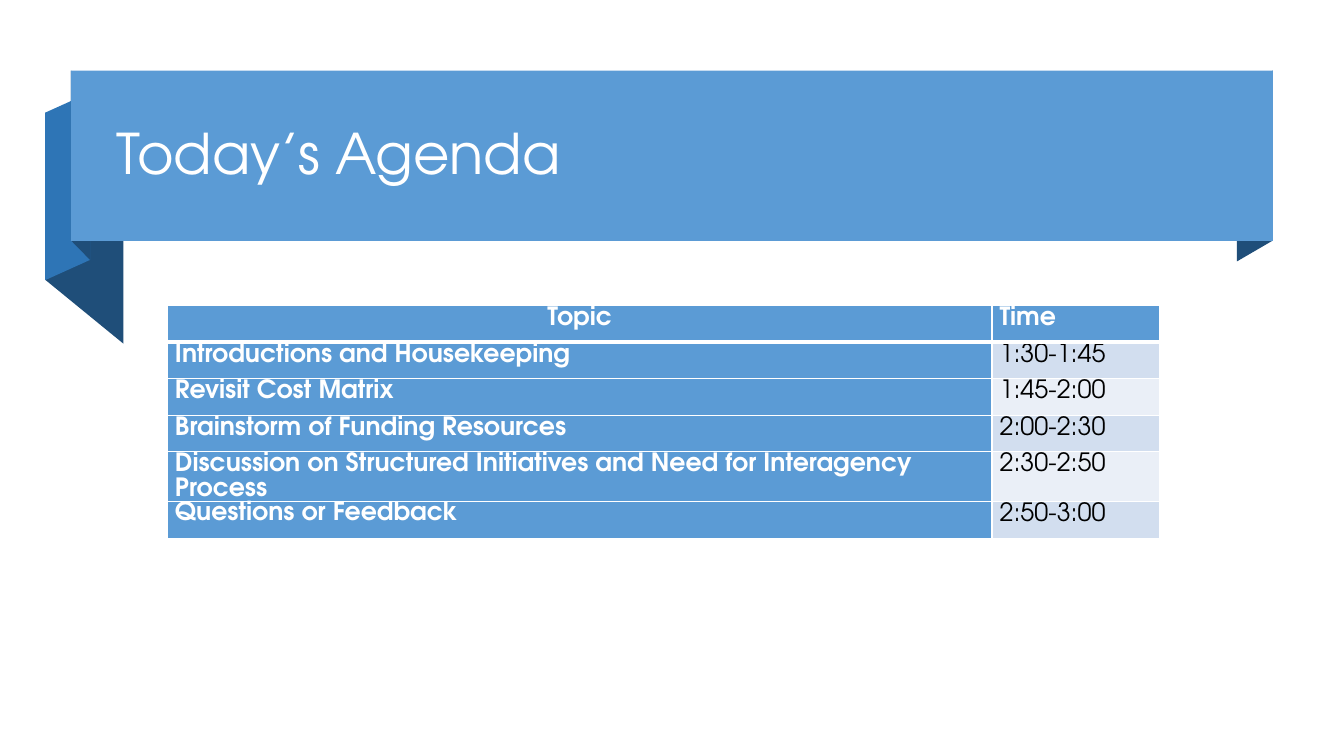
from lxml import etree
from pptx import Presentation
from pptx.dml.color import RGBColor
from pptx.enum import shapes, text
from pptx.oxml import ns
from pptx.util import Cm, Pt

BLUE = RGBColor(0x5B, 0x9B, 0xD5)
MID = RGBColor(0x2E, 0x75, 0xB6)
NAVY = RGBColor(0x1F, 0x4E, 0x79)
PALE = RGBColor(0xEA, 0xEF, 0xF7)
LIGHT = RGBColor(0xD2, 0xDE, 0xEF)
WHITE = RGBColor(0xFF, 0xFF, 0xFF)
BLACK = RGBColor(0, 0, 0)
FONT = "TeX Gyre Adventor"


def paint(shape, color):
    shape.shadow.inherit = False
    shape.fill.solid()
    shape.fill.fore_color.rgb = color
    shape.line.fill.background()


def edge(cell, side, width):
    props = cell._tc.get_or_add_tcPr()
    line = etree.SubElement(props, ns.qn("a:" + side), w=str(Pt(width)))
    fill = etree.SubElement(line, ns.qn("a:solidFill"))
    etree.SubElement(fill, ns.qn("a:srgbClr"), val=str(WHITE))


deck = Presentation()
deck.slide_width = Cm(33.87)
deck.slide_height = Cm(19.05)
slide = deck.slides.add_slide(deck.slide_layouts[5])

folds = [
    (1.14, 2.84, 3.11, 4.45, 4.21, NAVY),
    (1.14, 2.84, 2.27, 2.33, 4.22, MID),
    (1.79, 1.78, 2.27, 2.27, 4.28, NAVY),
    (31.17, 2.31, 32.08, 1.78, 4.28, NAVY),
]
for left, top, right, rise, tall, color in folds:
    pen = slide.shapes.build_freeform(Cm(left), Cm(top))
    pen.add_line_segments([
        (Cm(right), Cm(rise)),
        (Cm(right), Cm(rise + tall)),
        (Cm(left), Cm(top + tall)),
    ])
    paint(pen.convert_to_shape(), color)

band = slide.shapes.add_shape(
    shapes.MSO_SHAPE.RECTANGLE, Cm(1.79), Cm(1.78), Cm(30.29), Cm(4.29))
paint(band, BLUE)

title = slide.shapes.title
band._element.addnext(title._element)
title.left, title.top = Cm(2.67), Cm(2.24)
title.width, title.height = Cm(28.52), Cm(3.38)
frame = title.text_frame
frame.text = "Today’s Agenda"
frame.auto_size = text.MSO_AUTO_SIZE.NONE
frame.vertical_anchor = text.MSO_ANCHOR.MIDDLE
head = frame.paragraphs[0]
head.alignment = text.PP_ALIGN.LEFT
head.line_spacing = 0.9
head.font.name = FONT
head.font.size = Pt(40)
head.font.color.rgb = WHITE

agenda = [
    ("Topic", "Time"),
    ("Introductions and Housekeeping", "1:30-1:45"),
    ("Revisit Cost Matrix", "1:45-2:00"),
    ("Brainstorm of Funding Resources", "2:00-2:30"),
    ("Discussion on Structured Initiatives and Need for Interagency Process",
     "2:30-2:50"),
    ("Questions or Feedback", "2:50-3:00"),
]
table = slide.shapes.add_table(
    len(agenda), 2, Cm(4.22), Cm(7.7), Cm(25), Cm(5.54)).table
table.columns[0].width = Cm(20.78)
table.columns[1].width = Cm(4.22)

for row, words in enumerate(agenda):
    table.rows[row].height = Cm(0.99 if row == 4 else 0.92)
    for col, word in enumerate(words):
        cell = table.cell(row, col)
        strong = row == 0 or col == 0
        cell.margin_left = cell.margin_right = Cm(0.19)
        cell.margin_top = cell.margin_bottom = 0
        for side in ("lnL", "lnR", "lnT", "lnB"):
            thick = (row, side) in ((0, "lnB"), (1, "lnT"))
            edge(cell, side, 3 if thick else 1)
        cell.fill.solid()
        cell.fill.fore_color.rgb = BLUE if strong else LIGHT if row % 2 else PALE
        cell.text = word
        para = cell.text_frame.paragraphs[0]
        para.alignment = (text.PP_ALIGN.CENTER if word == "Topic"
                          else text.PP_ALIGN.LEFT)
        para.line_spacing = 1.0 if (row, col) == (5, 0) else 1.07
        para.font.name = FONT
        para.font.size = Pt(18)
        para.font.bold = strong
        para.font.color.rgb = WHITE if strong else BLACK

deck.save("out.pptx")
